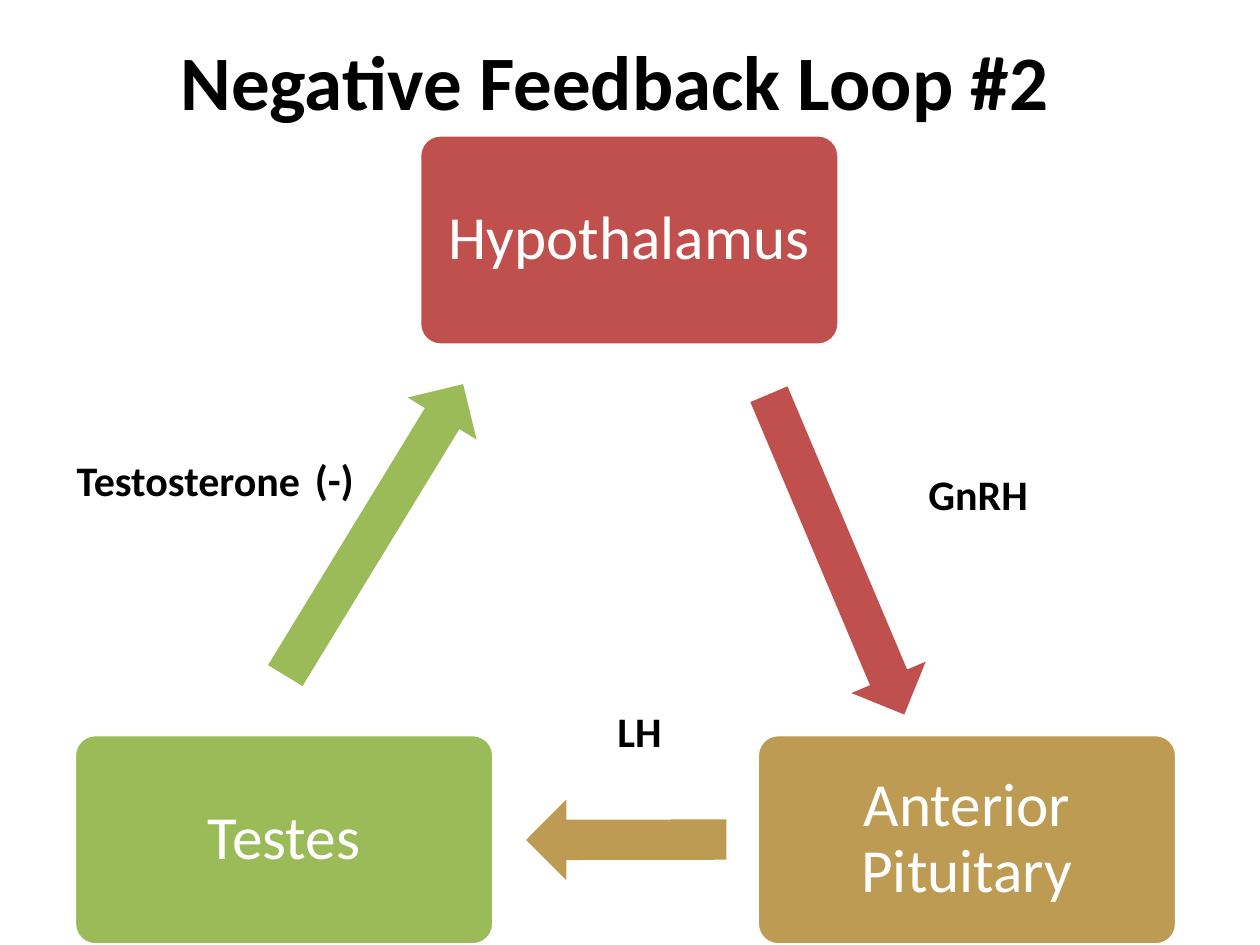
from pptx import Presentation
from pptx.dml.color import RGBColor
from pptx.enum.shapes import MSO_SHAPE
from pptx.enum.text import MSO_ANCHOR, PP_ALIGN
from pptx.util import Inches, Pt

RED = RGBColor(0xC0, 0x50, 0x4D)
GOLD = RGBColor(0xBD, 0x9B, 0x53)
GREEN = RGBColor(0x9B, 0xBB, 0x59)
BLACK = RGBColor(0, 0, 0)
WHITE = RGBColor(0xFF, 0xFF, 0xFF)

BOX_W, BOX_H = 3.33, 1.67
ARROW_W = 0.64


def write_text(tf, text, size=24, color=BLACK, bold=True,
               align=PP_ALIGN.LEFT, anchor=MSO_ANCHOR.TOP, spacing=None):
    tf.word_wrap = True
    tf.vertical_anchor = anchor
    p = tf.paragraphs[0]
    p.alignment = align
    if spacing:
        p.line_spacing = spacing
    r = p.add_run()
    r.text = text
    r.font.name = "Calibri"
    r.font.size = Pt(size)
    r.font.bold = bold
    r.font.color.rgb = color


def add_title(s, text):
    sp = s.shapes.title
    sp.left, sp.top = Inches(0.38), Inches(0.01)
    sp.width, sp.height = Inches(9), Inches(1.25)
    write_text(sp.text_frame, text, size=44, align=PP_ALIGN.CENTER,
               anchor=MSO_ANCHOR.MIDDLE)


def add_filled(s, shape, x, y, w, h, fill):
    sp = s.shapes.add_shape(shape, Inches(x), Inches(y), Inches(w), Inches(h))
    sp.shadow.inherit = False
    sp.fill.solid()
    sp.fill.fore_color.rgb = fill
    return sp


def add_gland(s, text, x, y, fill):
    sp = add_filled(s, MSO_SHAPE.ROUNDED_RECTANGLE, x, y, BOX_W, BOX_H, fill)
    sp.adjustments[0] = 0.1
    sp.line.color.rgb = WHITE
    sp.line.width = Pt(2)
    tf = sp.text_frame
    tf.margin_left = tf.margin_right = Inches(0.18)
    tf.margin_top = tf.margin_bottom = Inches(0.18)
    write_text(tf, text, size=35, color=WHITE, bold=False,
               align=PP_ALIGN.CENTER, anchor=MSO_ANCHOR.MIDDLE, spacing=0.9)


def add_arrow(s, x, y, length, rotation, fill):
    sp = add_filled(s, MSO_SHAPE.DOWN_ARROW, x, y, ARROW_W, length, fill)
    sp.rotation = rotation
    sp.line.fill.background()


def add_label(s, text, x, y, w, align=PP_ALIGN.LEFT):
    sp = s.shapes.add_textbox(Inches(x), Inches(y), Inches(w), Inches(0.5))
    write_text(sp.text_frame, text, align=align)


def main():
    prs = Presentation()
    prs.slide_width, prs.slide_height = Inches(10), Inches(7.5)
    s = prs.slides.add_slide(prs.slide_layouts[5])
    add_title(s, "Negative Feedback Loop #2")

    add_gland(s, "Hypothalamus", 3.33, 1.07, RED)
    add_arrow(s, 6.32, 3.02, 2.76, 337.1, RED)
    add_gland(s, "Anterior Pituitary", 6.01, 5.83, GOLD)
    add_arrow(s, 4.65, 5.87, 1.59, 89.9, GOLD)
    add_gland(s, "Testes", 0.59, 5.83, GREEN)
    add_arrow(s, 2.65, 2.85, 2.71, 211.4, GREEN)

    add_label(s, "GnRH", 7.27, 3.67, 1.25)
    add_label(s, "LH", 4.45, 5.55, 1.25, align=PP_ALIGN.CENTER)
    add_label(s, "Testosterone", 0.51, 3.56, 2.19)
    add_label(s, "(-)", 2.4, 3.55, 0.86)

    prs.save("out.pptx")


if __name__ == "__main__":
    main()
